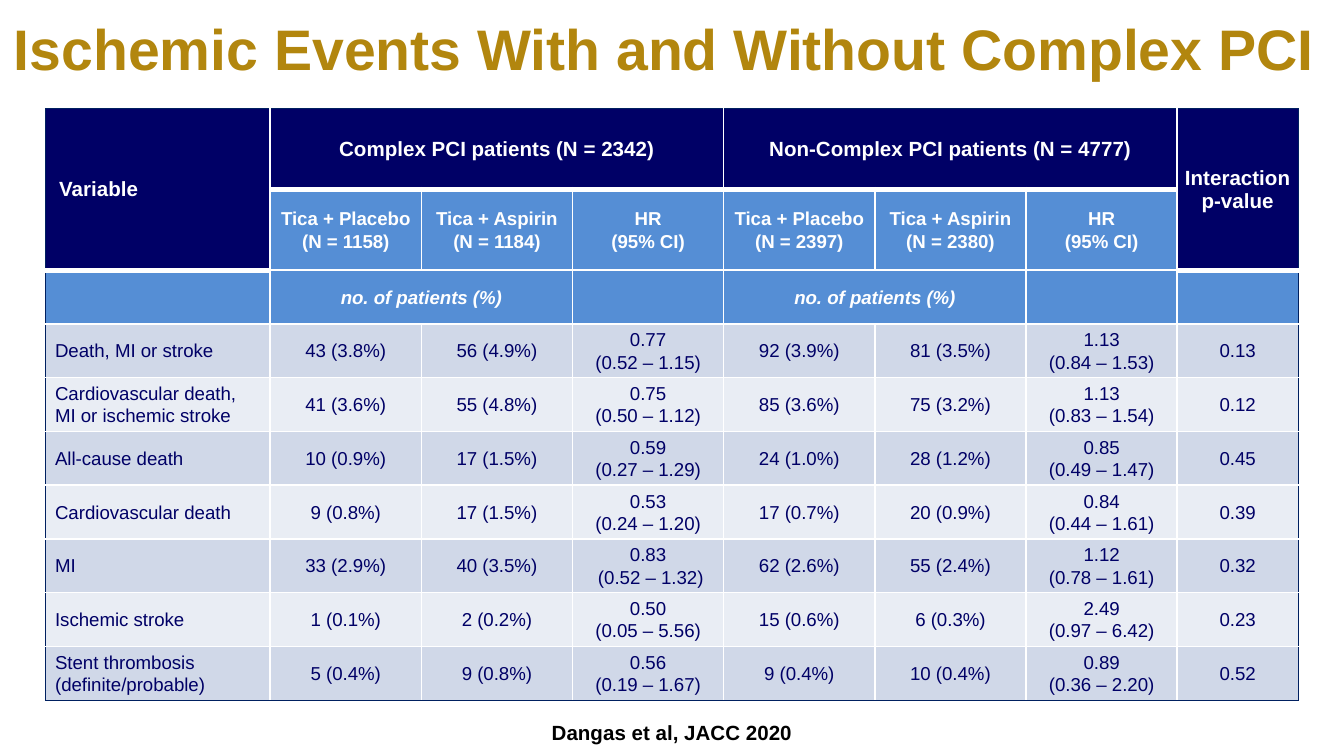
import pptx
import pptx.util
import pptx.dml.color
import pptx.enum.text
import pptx.oxml
import pptx.oxml.ns

Inches = pptx.util.Inches
Align = pptx.enum.text.PP_ALIGN
Anchor = pptx.enum.text.MSO_ANCHOR

WIDE = 10
HIGH = WIDE * 9 / 16
NAVY, BLUE, WHITE, EDGE = "000066", "558ED5", "FFFFFF", "002060"
BANDS = ("D0D8E8", "E9EDF4")

COLS = [1.67] + [6.75 / 6] * 6 + [0.9]
ROWS = [0.6] * 2 + [0.4] * 8
LAST_ROW, LAST_COL = len(ROWS) - 1, len(COLS) - 1

# First row, first column, last row, last column
SPANS = [(0, 0, 1, 0), (0, 1, 0, 3), (0, 4, 0, 6), (0, 7, 1, 7),
         (2, 1, 2, 2), (2, 4, 2, 5)]

HEADS = [
    ["Variable", "Complex PCI patients (N = 2342)", "", "",
     "Non-Complex PCI patients (N = 4777)", "", "", "Interaction\np-value"],
    ["", "Tica + Placebo\n(N = 1158)", "Tica + Aspirin\n(N = 1184)", "HR\n(95% CI)",
     "Tica + Placebo\n(N = 2397)", "Tica + Aspirin\n(N = 2380)", "HR\n(95% CI)", ""],
    ["", "no. of patients (%)", "", "", "no. of patients (%)", "", "", ""],
]
EVENTS = [
    ["Death, MI or stroke", "43 (3.8%)", "56 (4.9%)", "0.77\n(0.52 – 1.15)",
     "92 (3.9%)", "81 (3.5%)", "1.13\n(0.84 – 1.53)", "0.13"],
    ["Cardiovascular death, MI or ischemic stroke", "41 (3.6%)", "55 (4.8%)",
     "0.75\n(0.50 – 1.12)", "85 (3.6%)", "75 (3.2%)", "1.13\n(0.83 – 1.54)", "0.12"],
    ["All-cause death", "10 (0.9%)", "17 (1.5%)", "0.59\n(0.27 – 1.29)",
     "24 (1.0%)", "28 (1.2%)", "0.85\n(0.49 – 1.47)", "0.45"],
    ["Cardiovascular death", "9 (0.8%)", "17 (1.5%)", "0.53\n(0.24 – 1.20)",
     "17 (0.7%)", "20 (0.9%)", "0.84\n(0.44 – 1.61)", "0.39"],
    ["MI", "33 (2.9%)", "40 (3.5%)", "0.83\n (0.52 – 1.32)",
     "62 (2.6%)", "55 (2.4%)", "1.12\n(0.78 – 1.61)", "0.32"],
    ["Ischemic stroke", "1 (0.1%)", "2 (0.2%)", "0.50\n(0.05 – 5.56)",
     "15 (0.6%)", "6 (0.3%)", "2.49\n(0.97 – 6.42)", "0.23"],
    ["Stent thrombosis (definite/probable)", "5 (0.4%)", "9 (0.8%)",
     "0.56\n(0.19 – 1.67)", "9 (0.4%)", "10 (0.4%)", "0.89\n(0.36 – 2.20)", "0.52"],
]


def color(code):
    return pptx.dml.color.RGBColor.from_string(code)


def write(frame, text, tint, size, align=Align.CENTER, space=None, **style):
    """Fill a text frame, one paragraph for each line."""
    frame.text = text
    style = {"name": "Arial", "size": pptx.util.Pt(size), "bold": True, **style}
    for para in frame.paragraphs:
        para.alignment = align
        if space:
            para.line_spacing = space
        for run in para.runs:
            run.font.color.rgb = color(tint)
            for key, value in style.items():
                setattr(run.font, key, value)


def place(shape, left, top, width, height):
    """Set a box by shares of the slide's size."""
    shape.left, shape.width = Inches(left * WIDE), Inches(width * WIDE)
    shape.top, shape.height = Inches(top * HIGH), Inches(height * HIGH)


def below(row, col):
    """Border under a cell: thick beneath the navy heads."""
    if row in (-1, LAST_ROW):
        return EDGE, 0.5
    thick = row == 0 or (row == 1 and col in (0, LAST_COL))
    return WHITE, 3 if thick else 1


def beside(edge):
    return (EDGE, 0.5) if edge else (WHITE, 1)


def border(cell, row, col):
    sides = {"lnL": beside(col == 0), "lnR": beside(col == LAST_COL),
             "lnT": below(row - 1, col), "lnB": below(row, col)}
    props = cell._tc.get_or_add_tcPr()
    for spot, (side, (tint, width)) in enumerate(sides.items()):
        props.insert(spot, pptx.oxml.parse_xml(
            f'<a:{side} {pptx.oxml.ns.nsdecls("a")} w="{int(width * 12700)}">'
            f'<a:solidFill><a:srgbClr val="{tint}"/></a:solidFill></a:{side}>'))


def look(row, col):
    """Fill and text style of a cell."""
    if row == 0 or (row == 1 and col in (0, LAST_COL)):
        return NAVY, {"tint": WHITE, "size": 11}
    if row < 3:
        return BLUE, {"tint": WHITE, "size": 10, "space": 1.07, "italic": row == 2}
    return BANDS[(row - 3) % 2], {"tint": NAVY, "size": 10, "space": 1.07, "bold": False}


def format_cell(cell, row, col, text):
    fill, style = look(row, col)
    cell.fill.solid()
    cell.fill.fore_color.rgb = color(fill)
    border(cell, row, col)
    cell.vertical_anchor = Anchor.MIDDLE
    side = 0.1 if (row, col) == (0, 0) else 0.01 if row == 0 else 0.07
    cell.margin_left = cell.margin_right = Inches(side)
    cell.margin_top = cell.margin_bottom = 0
    if text:
        align = Align.LEFT if col == 0 else Align.CENTER
        write(cell.text_frame, text, align=align, **style)


def add_grid(slide):
    table = slide.shapes.add_table(
        len(ROWS), len(COLS), Inches(0.34), Inches(0.81),
        Inches(sum(COLS)), Inches(sum(ROWS))).table
    for column, size in zip(table.columns, COLS):
        column.width = Inches(size)
    for line, size in zip(table.rows, ROWS):
        line.height = Inches(size)
    for row, line in enumerate(HEADS + EVENTS):
        for col, text in enumerate(line):
            format_cell(table.cell(row, col), row, col, text)
    for top, left, end, right in SPANS:
        table.cell(top, left).merge(table.cell(end, right))


def main():
    deck = pptx.Presentation()
    deck.slide_width, deck.slide_height = Inches(WIDE), Inches(HIGH)
    slide = deck.slides.add_slide(deck.slide_layouts[5])

    # Title
    title = slide.shapes.title
    place(title, 0, 0.05 / HIGH, 1, 0.11)
    frame = title.text_frame
    frame.vertical_anchor = Anchor.TOP
    frame.auto_size = pptx.enum.text.MSO_AUTO_SIZE.NONE
    write(frame, "Ischemic Events With and Without Complex PCI ", "B2860E", 30.6)

    # Results
    add_grid(slide)

    # Citation
    note = slide.shapes.add_textbox(0, 0, 0, 0)
    place(note, 0.32, 5.3 / HIGH, 0.36, 0.29 / HIGH)
    note.text_frame.word_wrap = True
    note.text_frame.vertical_anchor = Anchor.MIDDLE
    write(note.text_frame, "Dangas et al, JACC 2020", "000000", 11)

    deck.save("out.pptx")


if __name__ == "__main__":
    main()
